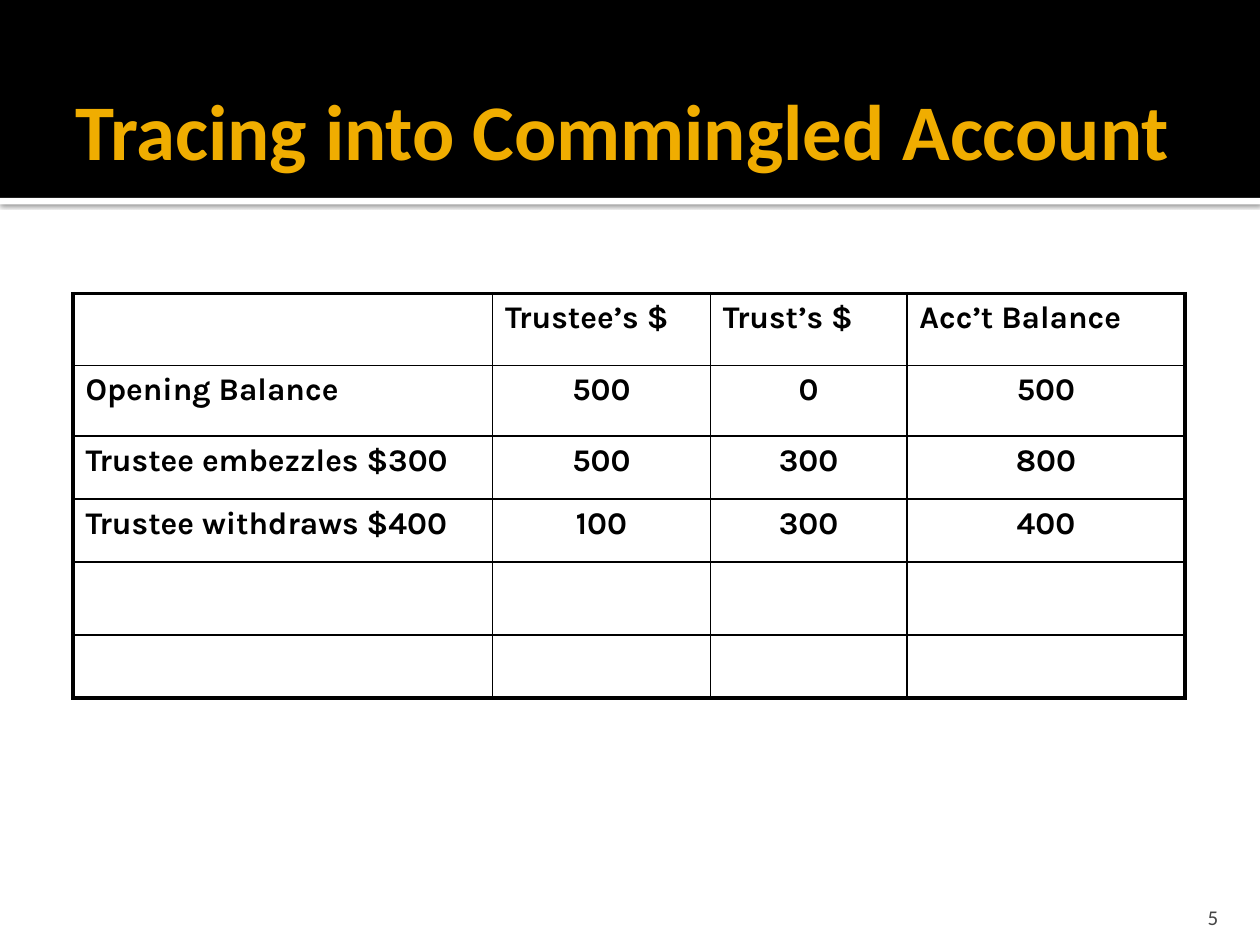
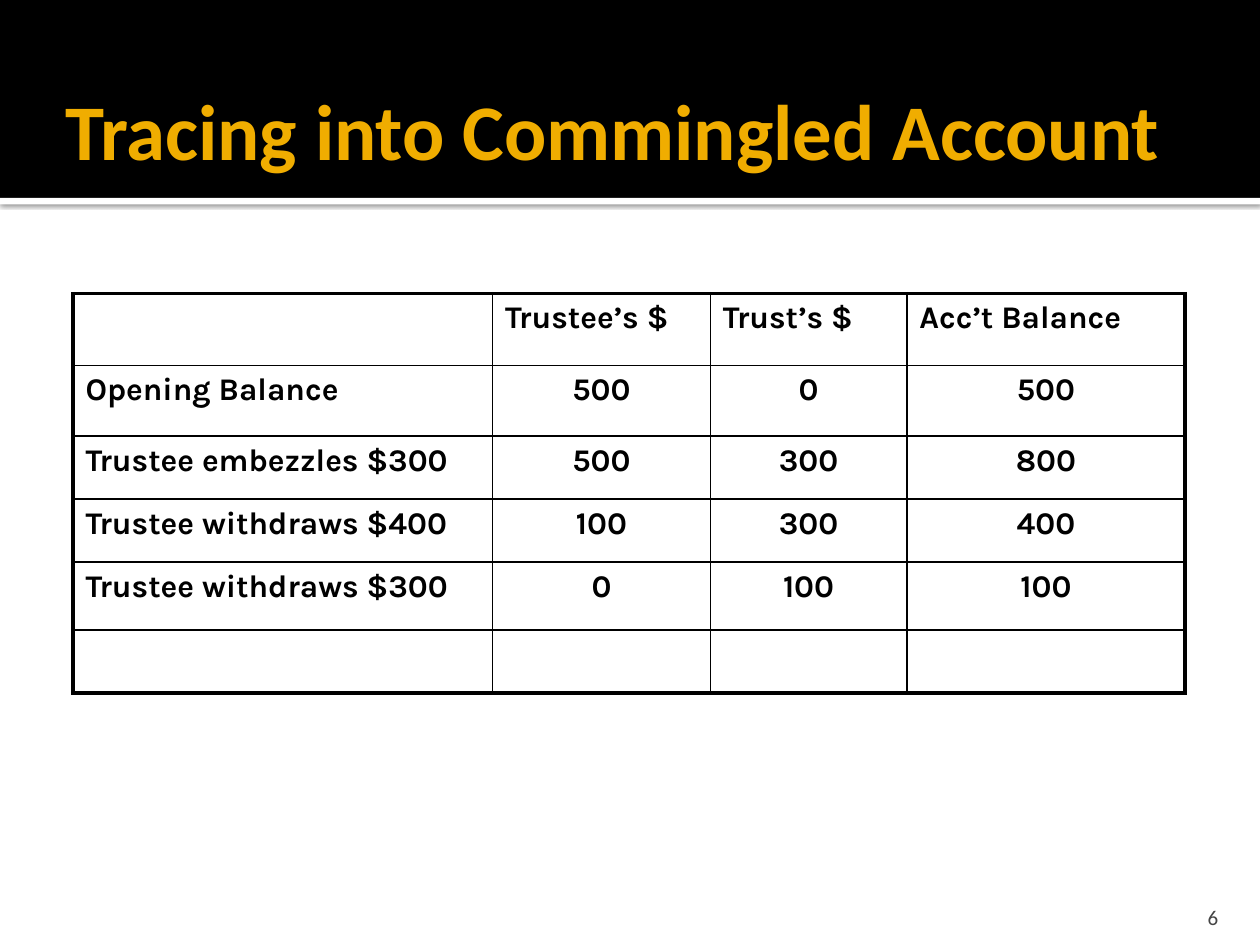
import pptx
import pptx.dml.color
import pptx.enum.shapes
import pptx.enum.text
import pptx.oxml
import pptx.oxml.ns
import pptx.util

Cm = pptx.util.Cm
Pt = pptx.util.Pt
ALIGN = pptx.enum.text.PP_ALIGN
ANCHOR = pptx.enum.text.MSO_ANCHOR
NAMESPACE = pptx.oxml.ns.nsdecls("a")
BLACK, WHITE, GOLD, GREY = "000000", "FFFFFF", "F0AD00", "454545"


def color(hex_value):
    return pptx.dml.color.RGBColor.from_string(hex_value)


def write(frame, text, alignment, font_values, frame_values):
    for name, value in frame_values.items():
        setattr(frame, name, value)
    para = frame.paragraphs[0]
    para.alignment = alignment
    span = para.add_run()
    span.text = text
    for name, value in font_values.items():
        if name == "color":
            span.font.color.rgb = color(value)
        else:
            setattr(span.font, name, value)


TITLE_FONT = {"name": "Calibri", "size": Pt(45), "bold": True, "color": GOLD}
CELL_FONT = {"name": "Karla", "size": Pt(18), "bold": True, "color": BLACK}
NUMBER_FONT = {"name": "Calibri", "size": Pt(12), "color": GREY}
TITLE_FRAME = {
    "word_wrap": True,
    "auto_size": pptx.enum.text.MSO_AUTO_SIZE.NONE,
    "vertical_anchor": ANCHOR.MIDDLE,
    "margin_left": Cm(0.25),
    "margin_right": Cm(0.13),
}
NUMBER_FRAME = {
    "word_wrap": True,
    "vertical_anchor": ANCHOR.BOTTOM,
    "margin_bottom": Cm(0),
}

COLUMN_WIDTHS = [8.46, 4.39, 3.96, 5.61]
LEDGER = [
    ["", "Trustee’s $", "Trust’s $", "Acc’t Balance"],
    ["Opening Balance", "500", "0", "500"],
    ["Trustee embezzles $300", "500", "300", "800"],
    ["Trustee withdraws $400", "100", "300", "400"],
]
BLANK_ENTRY = ["", "", "", ""]
SECOND_WITHDRAWAL = ["Trustee withdraws $300", "0", "100", "100"]
SLIDES = [
    {"number": "5", "title_left": 1.27, "entry": BLANK_ENTRY, "entry_height": 1.47},
    {"number": "6", "title_left": 1.07, "entry": SECOND_WITHDRAWAL, "entry_height": 1.37},
]

deck = pptx.Presentation()
deck.slide_width = Cm(25.4)
deck.slide_height = Cm(19.05)
layout = deck.slide_layouts[5]
pages = [deck.slides.add_slide(layout) for slide in SLIDES]

for fill, top, height in [(WHITE, 3.99, 0.13), (BLACK, 0, 3.99)]:
    band = pages[0].shapes.add_shape(
        pptx.enum.shapes.MSO_SHAPE.RECTANGLE, Cm(0), Cm(top), deck.slide_width, Cm(height)
    )
    band.fill.solid()
    band.fill.fore_color.rgb = color(fill)
    band.line.fill.background()
    band.shadow.inherit = False
    if fill == WHITE:
        effects = band.element.spPr.find(pptx.oxml.ns.qn("a:effectLst"))
        effects.append(pptx.oxml.parse_xml(
            f'<a:outerShdw {NAMESPACE} blurRad="{Pt(2.5)}" dist="{Pt(0.8)}" dir="5400000" '
            f'algn="tl" rotWithShape="0"><a:srgbClr val="{BLACK}">'
            '<a:alpha val="60000"/></a:srgbClr></a:outerShdw>'
        ))
    layout.shapes[0].element.addprevious(band.element)

for page, slide in zip(pages, SLIDES):
    title = page.shapes.title
    title_box = {
        "left": Cm(slide["title_left"]),
        "top": Cm(0.58),
        "width": Cm(24.84 - slide["title_left"]),
        "height": Cm(4.06),
    }
    for name, value in title_box.items():
        setattr(title, name, value)
    write(title.text_frame, "Tracing into Commingled Account", ALIGN.LEFT, TITLE_FONT, TITLE_FRAME)

    rows = LEDGER + [slide["entry"], BLANK_ENTRY]
    row_heights = [1.45, 1.42, 1.27, 1.27, slide["entry_height"], 1.27]
    last_row, last_column = len(rows) - 1, len(COLUMN_WIDTHS) - 1
    table = page.shapes.add_table(
        len(rows), len(COLUMN_WIDTHS), Cm(1.47), Cm(5.92),
        Cm(sum(COLUMN_WIDTHS)), Cm(sum(row_heights)),
    ).table
    table.first_row = False
    table.horz_banding = False
    for column, width in zip(table.columns, COLUMN_WIDTHS):
        column.width = Cm(width)
    for row, height in zip(table.rows, row_heights):
        row.height = Cm(height)

    for row_index, row in enumerate(rows):
        for column_index, text in enumerate(row):
            cell = table.cell(row_index, column_index)
            cell.fill.background()
            centred = row_index > 0 and column_index > 0
            if text:
                write(cell.text_frame, text, ALIGN.CENTER if centred else ALIGN.LEFT, CELL_FONT, {})
            outer_edges = {
                "L": column_index == 0,
                "R": column_index == last_column,
                "T": row_index == 0,
                "B": row_index == last_row,
            }
            properties = cell._tc.get_or_add_tcPr()
            for position, (side, outer) in enumerate(outer_edges.items()):
                properties.insert(position, pptx.oxml.parse_xml(
                    f'<a:ln{side} {NAMESPACE} w="{Pt(2.25 if outer else 1)}"><a:solidFill>'
                    f'<a:srgbClr val="{BLACK}"/></a:solidFill></a:ln{side}>'
                ))

    number_box = page.shapes.add_textbox(Cm(22.78), Cm(17.98), Cm(2.03), Cm(0.76))
    write(number_box.text_frame, slide["number"], ALIGN.RIGHT, NUMBER_FONT, NUMBER_FRAME)

deck.save("out.pptx")
